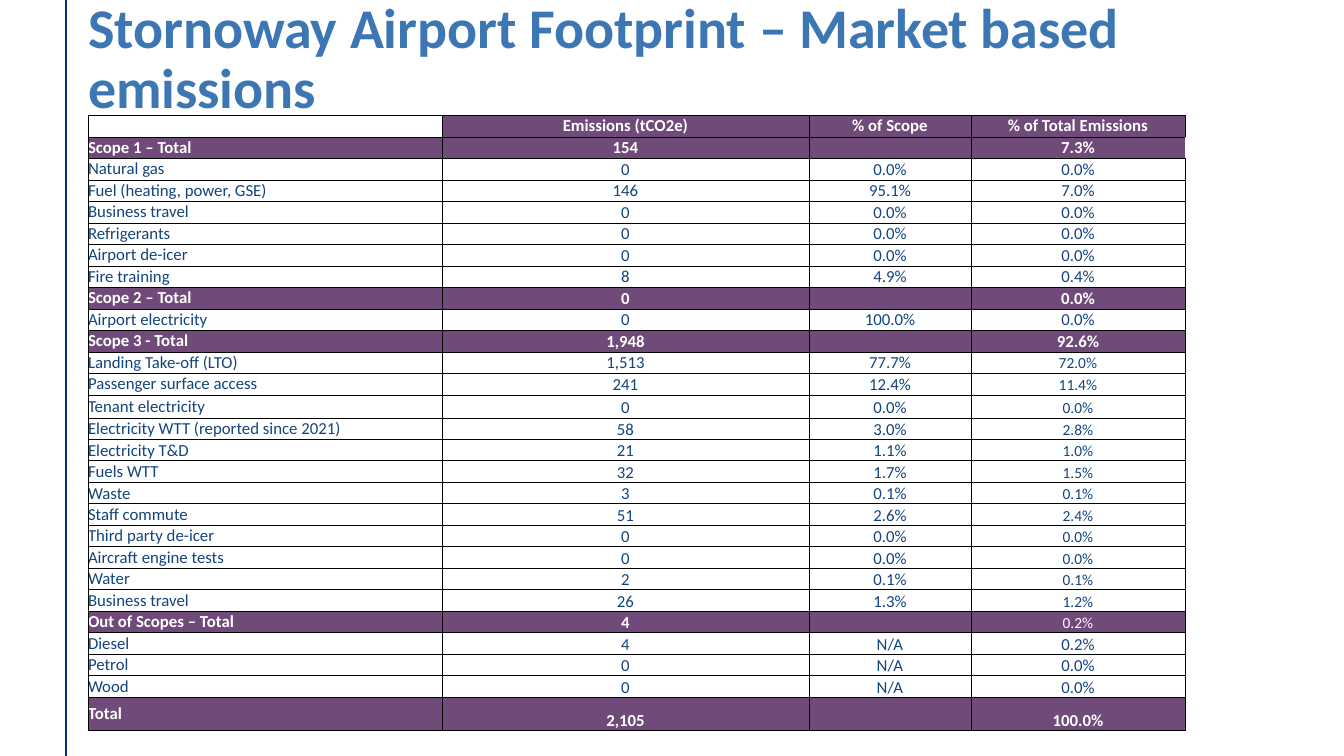
from dataclasses import dataclass

from lxml import etree
from pptx import Presentation
from pptx import util as u
from pptx.dml.color import RGBColor
from pptx.enum import shapes, text
from pptx.oxml import ns

PX = 9072


@dataclass(frozen=True)
class Theme:
    font: str = "Calibri"
    heading: str = "3C77B3"
    body: str = "12447D"
    band: str = "704A79"
    white: str = "FFFFFF"
    border: str = "000000"
    margin_rule: str = "023671"
    title_size: int = 40
    cell_size: int = 12
    small_size: int = 11


THEME = Theme()
COLUMN_WIDTHS = (354, 367, 162, 214)
HEADER = ("", "Emissions (tCO2e)", "% of Scope", "% of Total Emissions")
EMISSIONS = (
    HEADER,
    ("Scope 1 – Total", "154", "", "7.3%"),
    ("Natural gas", "0", "0.0%", "0.0%"),
    ("Fuel (heating, power, GSE)", "146", "95.1%", "7.0%"),
    ("Business travel", "0", "0.0%", "0.0%"),
    ("Refrigerants", "0", "0.0%", "0.0%"),
    ("Airport de-icer", "0", "0.0%", "0.0%"),
    ("Fire training", "8", "4.9%", "0.4%"),
    ("Scope 2 – Total", "0", "", "0.0%"),
    ("Airport electricity", "0", "100.0%", "0.0%"),
    ("Scope 3 - Total", "1,948", "", "92.6%"),
    ("Landing Take-off (LTO)", "1,513", "77.7%", "72.0%"),
    ("Passenger surface access", "241", "12.4%", "11.4%"),
    ("Tenant electricity", "0", "0.0%", "0.0%"),
    ("Electricity WTT (reported since 2021)", "58", "3.0%", "2.8%"),
    ("Electricity T&D", "21", "1.1%", "1.0%"),
    ("Fuels WTT", "32", "1.7%", "1.5%"),
    ("Waste", "3", "0.1%", "0.1%"),
    ("Staff commute", "51", "2.6%", "2.4%"),
    ("Third party de-icer", "0", "0.0%", "0.0%"),
    ("Aircraft engine tests", "0", "0.0%", "0.0%"),
    ("Water", "2", "0.1%", "0.1%"),
    ("Business travel", "26", "1.3%", "1.2%"),
    ("Out of Scopes – Total", "4", "", "0.2%"),
    ("Diesel", "4", "N/A", "0.2%"),
    ("Petrol", "0", "N/A", "0.0%"),
    ("Wood", "0", "N/A", "0.0%"),
    ("Total", "2,105", "", "100.0%"),
)
LABELS = [row[0] for row in EMISSIONS]
SMALL_ROWS = range(LABELS.index("Landing Take-off (LTO)"),
                   LABELS.index("Out of Scopes – Total") + 1)
SPECIAL_HEIGHTS = {"Tenant electricity": 23, "Total": 33}


def px(length):
    return u.Emu(length * PX)


def rgb(value):
    return RGBColor.from_string(value)


def add_run(paragraph, words, size, color, bold):
    run = paragraph.add_run()
    run.text = words
    run.font.name = THEME.font
    run.font.size = u.Pt(size)
    run.font.bold = bold
    run.font.color.rgb = rgb(color)


def clear_margins(holder):
    holder.margin_left = holder.margin_right = 0
    holder.margin_top = holder.margin_bottom = 0


def add_title(slide, words):
    title = slide.shapes.title
    title.left, title.top, title.width, title.height = map(px, (88, 0, 1209, 107))
    frame = title.text_frame
    clear_margins(frame)
    frame.word_wrap = True
    frame.auto_size = text.MSO_AUTO_SIZE.NONE
    frame.vertical_anchor = text.MSO_ANCHOR.TOP
    paragraph = frame.paragraphs[0]
    paragraph.alignment = text.PP_ALIGN.LEFT
    paragraph.line_spacing = 0.9
    add_run(paragraph, words, THEME.title_size, THEME.heading, True)


def add_margin_rule(slide):
    rule = slide.shapes.add_connector(
        shapes.MSO_CONNECTOR.STRAIGHT, px(66), 0, px(66), px(756))
    rule.line.color.rgb = rgb(THEME.margin_rule)
    rule.line.width = u.Pt(1)
    etree.SubElement(rule._element.spPr, ns.qn("a:effectLst"))


def set_borders(cell, open_right):
    properties = cell._tc.get_or_add_tcPr()
    for position, side in enumerate(("lnL", "lnR", "lnT", "lnB")):
        line = etree.Element(ns.qn(f"a:{side}"), w=str(u.Pt(0.5)))
        if side == "lnR" and open_right:
            etree.SubElement(line, ns.qn("a:noFill"))
        else:
            fill = etree.SubElement(line, ns.qn("a:solidFill"))
            etree.SubElement(fill, ns.qn("a:srgbClr"), val=THEME.border)
        properties.insert(position, line)


def fill_cell(cell, words, row, column):
    header = row == 0
    banded = (header and column > 0) or "Total" in LABELS[row]
    small = column == 3 and row in SMALL_ROWS
    clear_margins(cell)
    cell.fill.solid()
    cell.fill.fore_color.rgb = rgb(THEME.band if banded else THEME.white)
    middle = header or column == 0
    cell.vertical_anchor = text.MSO_ANCHOR.MIDDLE if middle else text.MSO_ANCHOR.BOTTOM
    paragraph = cell.text_frame.paragraphs[0]
    paragraph.alignment = text.PP_ALIGN.CENTER if column else text.PP_ALIGN.LEFT
    if words:
        add_run(paragraph, words,
                THEME.small_size if small else THEME.cell_size,
                THEME.white if banded else THEME.body,
                banded and not small)
    else:
        etree.SubElement(paragraph._p, ns.qn("a:endParaRPr"),
                         sz=str(THEME.cell_size * 100))
    set_borders(cell, LABELS[row] == "Scope 1 – Total" and column == 3)


def add_emissions_table(slide):
    heights = [SPECIAL_HEIGHTS.get(label, 22 - index % 2)
               for index, label in enumerate(LABELS)]
    table = slide.shapes.add_table(
        len(EMISSIONS), len(HEADER), px(88), px(115),
        px(sum(COLUMN_WIDTHS)), px(sum(heights))).table
    table.first_row = False
    table.horz_banding = False
    for column, width in zip(table.columns, COLUMN_WIDTHS):
        column.width = px(width)
    for row, height in zip(table.rows, heights):
        row.height = px(height)
    for row, values in enumerate(EMISSIONS):
        for column, words in enumerate(values):
            fill_cell(table.cell(row, column), words, row, column)


def main():
    deck = Presentation()
    deck.slide_width, deck.slide_height = px(1344), px(756)
    slide = deck.slides.add_slide(deck.slide_layouts[5])
    add_margin_rule(slide)
    add_title(slide, "Stornoway Airport Footprint – Market based emissions")
    add_emissions_table(slide)
    deck.save("out.pptx")


if __name__ == "__main__":
    main()
